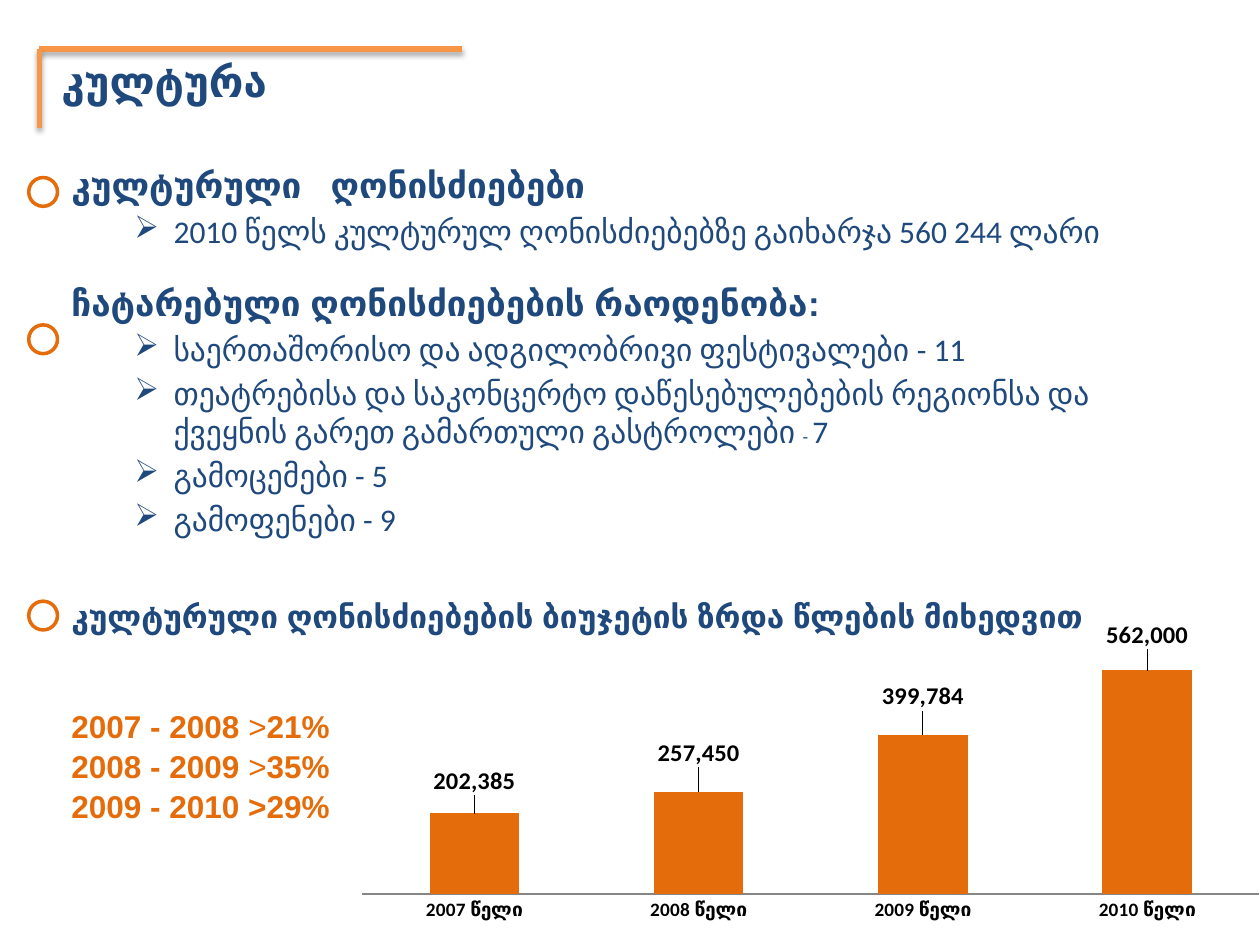
from dataclasses import dataclass

from lxml import etree
from pptx import Presentation
from pptx import util as u
from pptx.chart.data import CategoryChartData
from pptx.dml.color import RGBColor
from pptx.enum import chart as charts, shapes
from pptx.oxml import parse_xml
from pptx.oxml.ns import nsdecls, qn


@dataclass(frozen=True)
class Theme:
    """Colours, fonts and type sizes of the slide."""
    navy: str = "1F497D"
    orange: str = "E46C0A"
    frame: str = "F79646"
    black: str = "000000"
    axis: str = "868686"
    heading_font: str = "Arial"
    body_font: str = "Calibri"
    title: float = 24
    heading: float = 20
    body: float = 18
    dash: float = 10.5
    value: float = 14
    category: float = 11


@dataclass(frozen=True)
class Box:
    """A region in centimetres."""
    left: float
    top: float
    width: float
    height: float

    def lengths(self):
        """Return the four sides as lengths."""
        return [u.Cm(side) for side in (self.left, self.top, self.width, self.height)]


THEME = Theme()
RING = 0.58
RING_LEFT = 0.58
EVENTS = [
    (0, ["კულტურული", " ", "ღონისძიებები"], 4),
    (1, ["2010 წელს კულტურულ ღონისძიებებზე გაიხარჯა 560 244 ლარი"], 3.6),
    (0, ["ჩატარებული ღონისძიებების რაოდენობა:"], 18),
    (1, ["საერთაშორისო და ადგილობრივი ფესტივალები - 11"], 3.6),
    (1, ["თეატრებისა და საკონცერტო დაწესებულებების რეგიონსა და ქვეყნის "
         "გარეთ გამართული გასტროლები ", "- ", "7"], 3.6),
    (1, ["გამოცემები - 5"], 3.6),
    (1, ["გამოფენები - 9"], 3.6),
]
GROWTH = [
    ("2007 - 2008", " >", "21%"),
    ("2008 - 2009 ", ">", "35%"),
    ("2009 - 2010 ", ">", "29%"),
]
BUDGET = {"2007 წელი": 202385, "2008 წელი": 257450,
          "2009 წელი": 399784, "2010 წელი": 562000}


def style(font, size, color, name, bold=False):
    """Format a font."""
    font.size, font.name, font.bold = u.Pt(size), name, bold
    font.color.rgb = RGBColor.from_string(color)


def add_text_frame(slide, box):
    """Add a wrapping text box and return its frame."""
    frame = slide.shapes.add_textbox(*box.lengths()).text_frame
    frame.word_wrap = True
    return frame


def next_paragraph(frame, index):
    """Return the first paragraph or a new one."""
    return frame.add_paragraph() if index else frame.paragraphs[0]


def add_run(paragraph, words, *look):
    """Append a formatted run."""
    run = paragraph.add_run()
    run.text = words
    style(run.font, *look)
    return run


def add_bullet(paragraph):
    """Give a paragraph a hanging arrow bullet."""
    properties = paragraph._p.get_or_add_pPr()
    properties.set("marL", str(u.Cm(2.06)))
    properties.set("indent", str(-u.Cm(0.79)))
    bullet_font = etree.SubElement(properties, qn("a:buFont"))
    bullet_font.set("typeface", "Wingdings")
    bullet_font.set("charset", "2")
    etree.SubElement(properties, qn("a:buChar")).set("char", "Ø")


def add_line(slide, start, end):
    """Add one shadowed frame line."""
    line = slide.shapes.add_connector(
        shapes.MSO_CONNECTOR.STRAIGHT, *(u.Cm(value) for value in start + end))
    line.line.color.rgb = RGBColor.from_string(THEME.frame)
    line.line.width = u.Pt(3)
    line._element.spPr.append(parse_xml(
        f'<a:effectLst {nsdecls("a")}><a:outerShdw blurRad="{u.Pt(3.1)}" '
        f'dist="{u.Pt(1.8)}" dir="5400000" rotWithShape="0">'
        f'<a:srgbClr val="{THEME.black}"><a:alpha val="35000"/></a:srgbClr>'
        '</a:outerShdw></a:effectLst>'))


def add_title(slide, box):
    """Add the title inside its corner frame."""
    corner = (box.left, box.top)
    add_line(slide, corner, (box.left + 8.53, box.top))
    add_line(slide, corner, (box.left, box.top + 1.6))
    frame = add_text_frame(slide, Box(box.left + 0.2, box.top, box.width - 0.2, 1.27))
    add_run(frame.paragraphs[0], "კულტურა", THEME.title, THEME.navy, THEME.body_font, True)


def add_ring(slide, top):
    """Add a ring marker in the left margin."""
    ring = slide.shapes.add_shape(
        shapes.MSO_SHAPE.OVAL, *Box(RING_LEFT, top, RING, RING).lengths())
    ring.shadow.inherit = False
    ring.fill.background()
    ring.line.color.rgb = RGBColor.from_string(THEME.orange)
    ring.line.width = u.Pt(2)


def add_events(slide, box):
    """Add the headed lists of events with their rings."""
    frame = add_text_frame(slide, box)
    for index, (level, pieces, gap) in enumerate(EVENTS):
        paragraph = next_paragraph(frame, index)
        paragraph.space_before = u.Pt(gap)
        if level:
            paragraph.level = level
            add_bullet(paragraph)
        for piece in pieces:
            if level:
                size = THEME.dash if piece == "- " else THEME.body
                add_run(paragraph, piece, size, THEME.navy, THEME.body_font)
            else:
                run = add_run(paragraph, piece, THEME.heading, THEME.navy,
                              THEME.heading_font, True)
                if piece == " ":
                    run._r.get_or_add_rPr().set("spc", "1100")
    for offset in (0.4, 3.37):
        add_ring(slide, box.top + offset)


def add_budget_heading(slide, box):
    """Add the heading above the chart with its ring."""
    frame = add_text_frame(slide, box)
    add_run(frame.paragraphs[0], "კულტურული ღონისძიებების ბიუჯეტის ზრდა წლების მიხედვით",
            THEME.body, THEME.navy, THEME.heading_font, True)
    add_ring(slide, box.top + 0.21)


def add_growth(slide, box):
    """Add the yearly growth rates."""
    frame = add_text_frame(slide, box)
    for index, (years, sign, rate) in enumerate(GROWTH):
        paragraph = next_paragraph(frame, index)
        paragraph.line_spacing = 1.05
        last = index == len(GROWTH) - 1
        for words, bold in ((years, True), (sign, last), (rate, True)):
            add_run(paragraph, words, THEME.body, THEME.orange, THEME.heading_font, bold)


def add_layout(parent, position, target="", **parts):
    """Insert a manual chart layout at a child position."""
    inner = '<c:layoutTarget val="inner"/>' if target else ""
    modes = '<c:xMode val="edge"/><c:yMode val="edge"/>' if target else ""
    values = "".join(f'<c:{name} val="{value}"/>' for name, value in parts.items())
    parent.insert(position, parse_xml(
        f'<c:layout {nsdecls("c")}><c:manualLayout>{inner}{modes}{values}'
        '</c:manualLayout></c:layout>'))


def add_budget_chart(slide, box):
    """Add the column chart of yearly budgets."""
    data = CategoryChartData(number_format="#,##0")
    data.categories = list(BUDGET)
    data.add_series("Series 1", list(BUDGET.values()))
    chart = slide.shapes.add_chart(
        charts.XL_CHART_TYPE.COLUMN_CLUSTERED, *box.lengths(), data).chart
    chart.has_legend = chart.has_title = False
    style(chart.font, 10, THEME.black, THEME.body_font)
    categories, values = chart.category_axis, chart.value_axis
    categories.major_tick_mark = charts.XL_TICK_MARK.NONE
    categories.format.line.color.rgb = RGBColor.from_string(THEME.axis)
    style(categories.tick_labels.font, THEME.category, THEME.black, THEME.body_font, True)
    values.visible = values.has_major_gridlines = False
    values.minimum_scale, values.maximum_scale = 0, 600000
    plot = chart.plots[0]
    plot.gap_width, plot.vary_by_categories = 150, False
    series = plot.series[0]
    series.format.fill.solid()
    series.format.fill.fore_color.rgb = RGBColor.from_string(THEME.orange)
    labels = series.data_labels
    labels.show_value, labels.number_format = True, "#,##0"
    labels.number_format_is_linked = False
    for index, rise in enumerate((-0.04, -0.06, -0.06, -0.05)):
        label = series.points[index].data_label
        style(label.font, THEME.value, THEME.black, THEME.body_font, True)
        label.position = charts.XL_LABEL_POSITION.OUTSIDE_END
        add_layout(labels._element.findall(qn("c:dLbl"))[index], 1, x=0.0, y=rise)
    area = chart._chartSpace.chart.plotArea
    for layout in area.findall(qn("c:layout")):
        area.remove(layout)
    add_layout(area, 0, "inner", x=0.04, y=0.09, w=0.96, h=0.75)


def main():
    """Build and save the culture slide."""
    presentation = Presentation()
    presentation.slide_width, presentation.slide_height = u.Cm(25.4), u.Cm(19.05)
    slide = presentation.slides.add_slide(presentation.slide_layouts[6])
    add_events(slide, Box(1.19, 3.18, 23.39, 10.52))
    add_title(slide, Box(0.79, 0.99, 10.92, 1.6))
    add_budget_heading(slide, Box(1.19, 11.91, 22.02, 1.02))
    add_budget_chart(slide, Box(6.55, 12.5, 18.85, 6.55))
    add_growth(slide, Box(1.19, 14.1, 12.7, 2.57))
    presentation.save("out.pptx")


if __name__ == "__main__":
    main()
